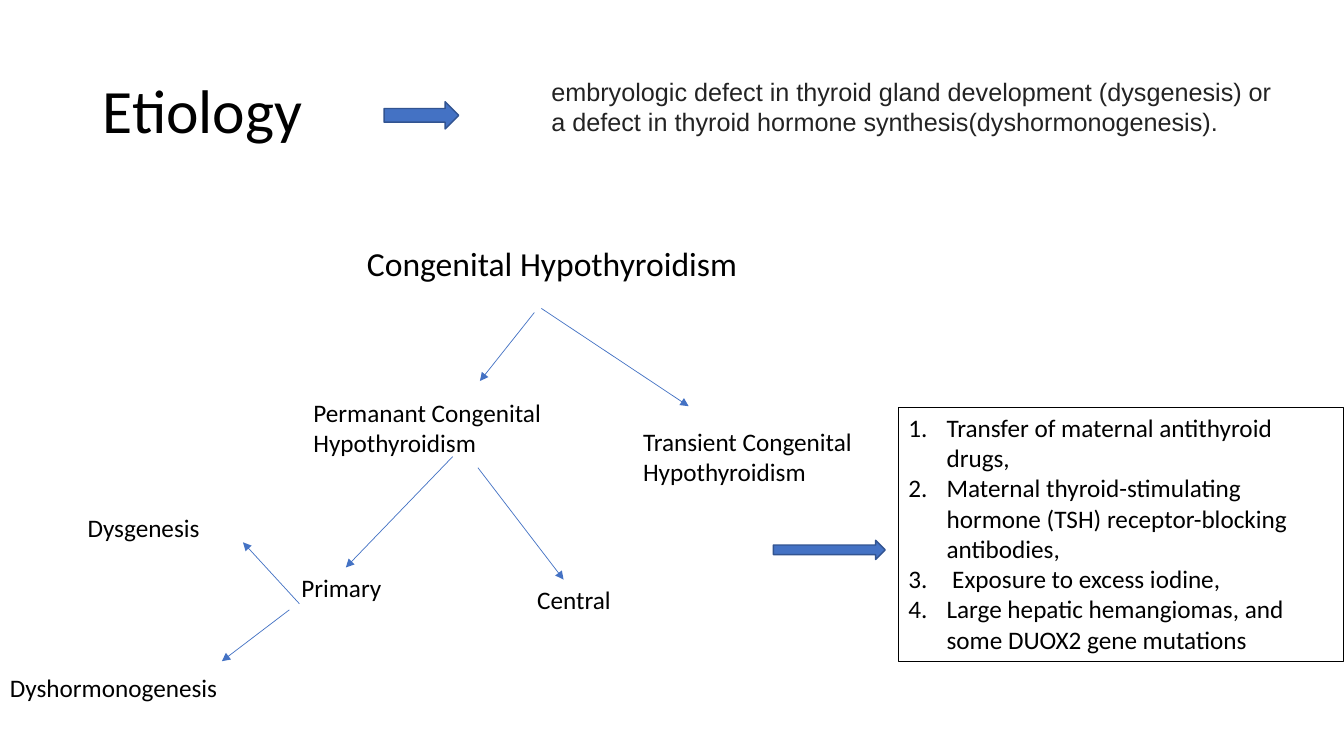
from pptx import Presentation
from pptx.dml.color import RGBColor
from pptx.enum.shapes import MSO_CONNECTOR, MSO_SHAPE
from pptx.enum.text import MSO_ANCHOR, PP_ALIGN
from pptx.oxml.ns import qn
from pptx.util import Inches, Pt
from lxml import etree

BLACK = RGBColor(0, 0, 0)
GREY = RGBColor(0x23, 0x23, 0x23)
BLUE = RGBColor(0x44, 0x72, 0xC4)
NAVY = RGBColor(0x32, 0x54, 0x91)

deck = Presentation()
deck.slide_width, deck.slide_height = Inches(13.33), Inches(7.5)
slide = deck.slides.add_slide(deck.slide_layouts[6])
shapes = slide.shapes


def write(frame, lines, size=18, font="Calibri", color=BLACK):
    frame.word_wrap = True
    for i, line in enumerate(lines):
        para = frame.paragraphs[0] if i == 0 else frame.add_paragraph()
        para.alignment = PP_ALIGN.LEFT
        run = para.add_run()
        run.text = line
        run.font.size = Pt(size)
        run.font.name = font
        run.font.color.rgb = color


def add_text(x, y, w, h, lines, **style):
    box = shapes.add_textbox(Inches(x), Inches(y), Inches(w), Inches(h))
    write(box.text_frame, lines, **style)
    return box.text_frame


# Title and definition
title = add_text(0.92, 0.4, 11.5, 1.45, ["Etiology"], size=44)
title.vertical_anchor = MSO_ANCHOR.MIDDLE
title.paragraphs[0].line_spacing = 0.9
add_text(5.37, 0.71, 7.6, 0.71, [
    "embryologic defect in thyroid gland development (dysgenesis) or",
    "a defect in thyroid hormone synthesis(dyshormonogenesis).",
], font="Arial", color=GREY)

# Tree labels
add_text(3.54, 2.36, 5.99, 0.5, ["Congenital Hypothyroidism"], size=24)
labels = [
    (3.01, 3.89, 3.76, 0.71, "Permanant Congenital Hypothyroidism"),
    (6.28, 4.18, 3.76, 0.71, "Transient Congenital Hypothyroidism"),
    (5.23, 5.75, 1.6, 0.4, "Central"),
    (2.89, 5.63, 1.6, 0.4, "Primary"),
    (0.77, 5.03, 1.88, 0.4, "Dysgenesis"),
    (0, 6.62, 2.31, 0.4, "Dyshormonogenesis"),
]
for x, y, w, h, label in labels:
    add_text(x, y, w, h, [label])

# Tree branches
branches = [
    (5.3, 3.1, 4.76, 3.78),
    (5.37, 3.06, 6.83, 4.03),
    (4.49, 4.53, 3.43, 5.63),
    (4.74, 4.64, 5.59, 5.75),
    (2.97, 5.99, 2.41, 5.38),
    (2.87, 6.05, 2.2, 6.56),
]
for ends in branches:
    branch = shapes.add_connector(MSO_CONNECTOR.STRAIGHT, *map(Inches, ends))
    branch.line.color.rgb = BLUE
    branch.line.width = Pt(0.5)
    head = etree.SubElement(branch.line._get_or_add_ln(), qn("a:tailEnd"))
    head.set("type", "triangle")
    etree.SubElement(branch._element.spPr, qn("a:effectLst"))

# Block arrows
for place in [(3.81, 1.01, 0.74, 0.27), (7.67, 5.36, 1.11, 0.19)]:
    arrow = shapes.add_shape(MSO_SHAPE.RIGHT_ARROW, *map(Inches, place))
    arrow.shadow.inherit = False
    arrow.fill.solid()
    arrow.fill.fore_color.rgb = BLUE
    arrow.line.color.rgb = NAVY
    arrow.line.width = Pt(1)

# Numbered causes of the transient form
panel = shapes.add_shape(MSO_SHAPE.RECTANGLE, Inches(8.91), Inches(4.04),
                         Inches(4.42), Inches(2.52))
panel.shadow.inherit = False
panel.fill.background()
panel.line.color.rgb = BLACK
panel.line.width = Pt(0.75)
panel.text_frame.vertical_anchor = MSO_ANCHOR.TOP
write(panel.text_frame, [
    "Transfer of maternal antithyroid drugs,",
    "Maternal thyroid-stimulating hormone (TSH) receptor-blocking antibodies,",
    " Exposure to excess iodine,",
    "Large hepatic hemangiomas, and some DUOX2 gene mutations",
])
for para in panel.text_frame.paragraphs:
    props = para._p.get_or_add_pPr()
    props.set("marL", str(Inches(0.38)))
    props.set("indent", str(-Inches(0.38)))
    etree.SubElement(props, qn("a:buFont")).set("typeface", "+mj-lt")
    etree.SubElement(props, qn("a:buAutoNum")).set("type", "arabicPeriod")

deck.save("out.pptx")
